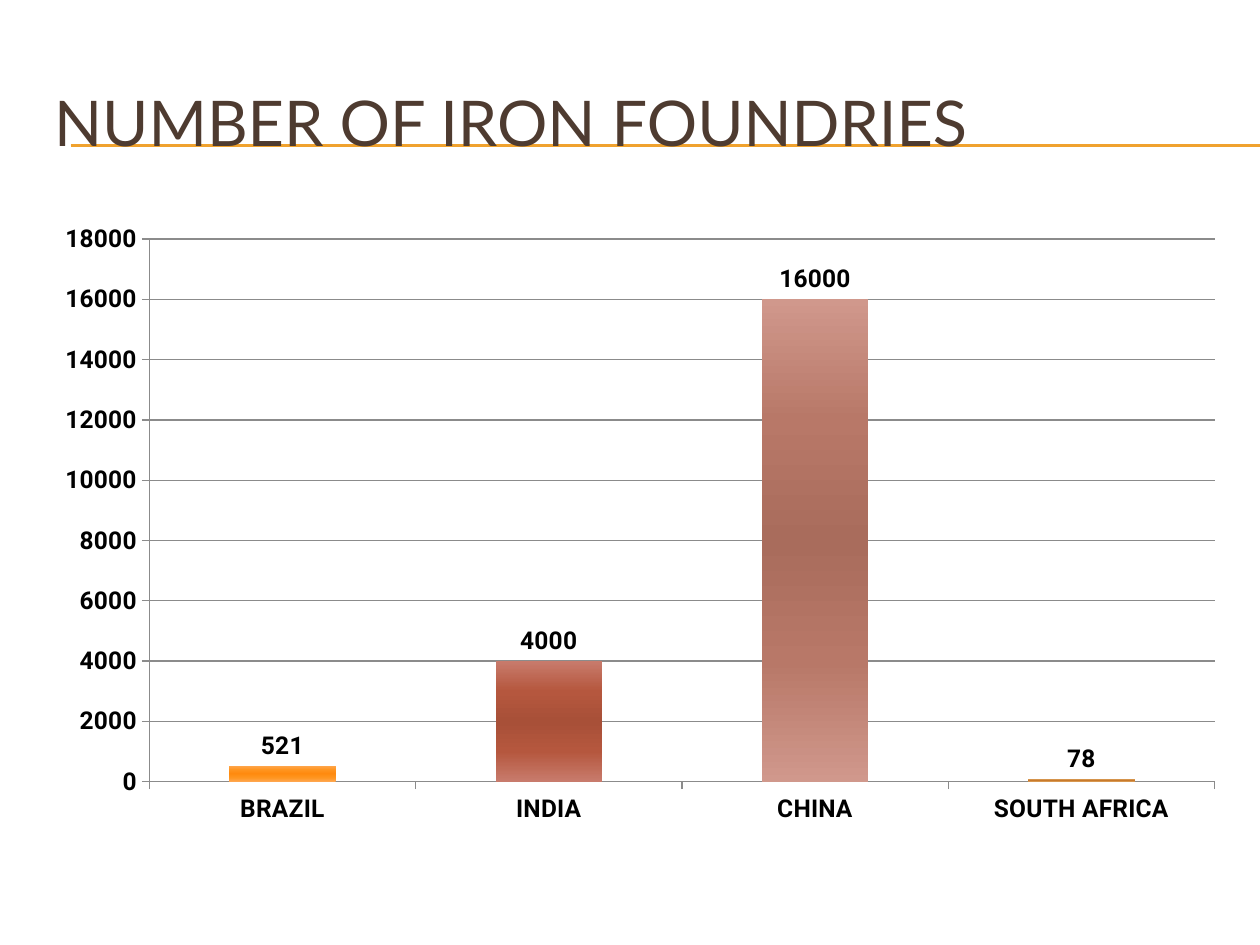
from copy import deepcopy
from dataclasses import dataclass

from pptx import Presentation
from pptx.chart.data import CategoryChartData
from pptx.dml.color import RGBColor
from pptx.enum.chart import XL_CHART_TYPE as ChartType, XL_LABEL_POSITION as LabelPosition
from pptx.enum.chart import XL_TICK_MARK as TickMark
from pptx.enum.shapes import MSO_CONNECTOR as Connector
from pptx.enum.text import MSO_ANCHOR as Anchor, MSO_AUTO_SIZE as AutoSize, PP_ALIGN as Align
from pptx.oxml import parse_xml
from pptx.oxml.ns import nsdecls, qn
from pptx.util import Inches, Pt

COLORS = {"title": "4E3B30", "rule": "F0A22E", "text": "000000", "axis": "8B8B8B"}


@dataclass
class Country:
    name: str
    foundries: int
    edge: str
    body: str
    core: str


COUNTRIES = [
    Country("BRAZIL", 521, "FFA64D", "FF951F", "FF8A0F"),
    Country("INDIA", 4000, "C87B6C", "B5573E", "A85038"),
    Country("CHINA", 16000, "D0988C", "B87868", "A96C5C"),
    Country("SOUTH AFRICA", 78, "D99A55", "D08A3E", "C87A2C"),
]


def rgb(color: str) -> RGBColor:
    return RGBColor.from_string(color)


def format_font(font, *, name: str, size: int, color: str, bold: bool = False) -> None:
    font.name = name
    font.size = Pt(size)
    font.bold = bold
    font.color.rgb = rgb(color)


def write_text(frame, text: str, *, align=Align.LEFT, **style) -> None:
    para = frame.paragraphs[0]
    para.alignment = align
    span = para.add_run()
    span.text = text
    format_font(span.font, **style)


def add_title(slide, text: str):
    title = slide.shapes.title
    title.left, title.top = Inches(0.33), Inches(0.5)
    title.width, title.height = Inches(9.5), Inches(0.92)
    frame = title.text_frame
    frame.word_wrap = True
    frame.auto_size = AutoSize.NONE
    frame.vertical_anchor = Anchor.MIDDLE
    write_text(frame, text, name="Lato", size=36, color=COLORS["title"])
    return title


def add_rule_behind(slide, title, top: float) -> None:
    rule = slide.shapes.add_connector(
        Connector.STRAIGHT, Inches(0.56), Inches(top), Inches(10), Inches(top))
    rule.line.color.rgb = rgb(COLORS["rule"])
    rule.line.width = Pt(0.75)
    rule.element.spPr.append(parse_xml(f"<a:effectLst {nsdecls('a')}/>"))
    title.element.addprevious(rule.element)


def shade_bar(series, index: int, country: Country) -> None:
    fill = series.points[index].format.fill
    fill.gradient()
    fill.gradient_angle = 90
    stops = list(series._element.iter(qn("a:gsLst")))[-1]
    for _ in range(3):
        stops.append(deepcopy(stops[0]))
    shades = [country.edge, country.body, country.core, country.body, country.edge]
    for step, (stop, shade) in enumerate(zip(fill.gradient_stops, shades)):
        stop.position = step / 4
        stop.color.rgb = rgb(shade)


def place_plot(chart, **fractions: float) -> None:
    plot_area = chart._chartSpace.find(".//" + qn("c:plotArea"))
    for layout in plot_area.findall(qn("c:layout")):
        plot_area.remove(layout)
    values = "".join(f'<c:{key} val="{value}"/>' for key, value in fractions.items())
    plot_area.insert(0, parse_xml(
        f'<c:layout {nsdecls("c")}><c:manualLayout><c:layoutTarget val="inner"/>'
        f'<c:xMode val="edge"/><c:yMode val="edge"/>{values}</c:manualLayout></c:layout>'))


def add_foundry_chart(slide, countries: list[Country]) -> None:
    data = CategoryChartData()
    data.categories = [country.name for country in countries]
    data.add_series("Series 1", [country.foundries for country in countries])
    chart = slide.shapes.add_chart(
        ChartType.COLUMN_CLUSTERED, Inches(0.33), Inches(1.7), Inches(9.5), Inches(4.95), data).chart
    chart.has_legend = False
    chart.has_title = False
    format_font(chart.font, name="Roboto", size=14, color=COLORS["text"], bold=True)
    place_plot(chart, x=0.09, y=0.04, w=0.89, h=0.87)

    values = chart.value_axis
    values.minimum_scale, values.maximum_scale, values.major_unit = 0, 18000, 2000
    values.has_major_gridlines = True
    for axis in (chart.category_axis, values):
        axis.major_tick_mark = TickMark.OUTSIDE
        axis.minor_tick_mark = TickMark.NONE
    for line in (chart.category_axis.format.line, values.format.line,
                 values.major_gridlines.format.line):
        line.color.rgb = rgb(COLORS["axis"])
        line.width = Pt(0.75)

    plot = chart.plots[0]
    plot.gap_width = 150
    plot.vary_by_categories = False
    series = plot.series[0]
    series.invert_if_negative = False
    for index, country in enumerate(countries):
        shade_bar(series, index, country)
    labels = series.data_labels
    labels.show_value = True
    labels.position = LabelPosition.OUTSIDE_END
    format_font(labels.font, name="Roboto", size=14, color=COLORS["text"], bold=True)


def main() -> None:
    deck = Presentation()
    deck.slide_width, deck.slide_height = Inches(10), Inches(7.5)
    slide = deck.slides.add_slide(deck.slide_layouts[5])
    title = add_title(slide, "NUMBER OF IRON FOUNDRIES")
    for top in (1.15, 1.16):
        add_rule_behind(slide, title, top)
    add_foundry_chart(slide, COUNTRIES)
    deck.save("out.pptx")


if __name__ == "__main__":
    main()
